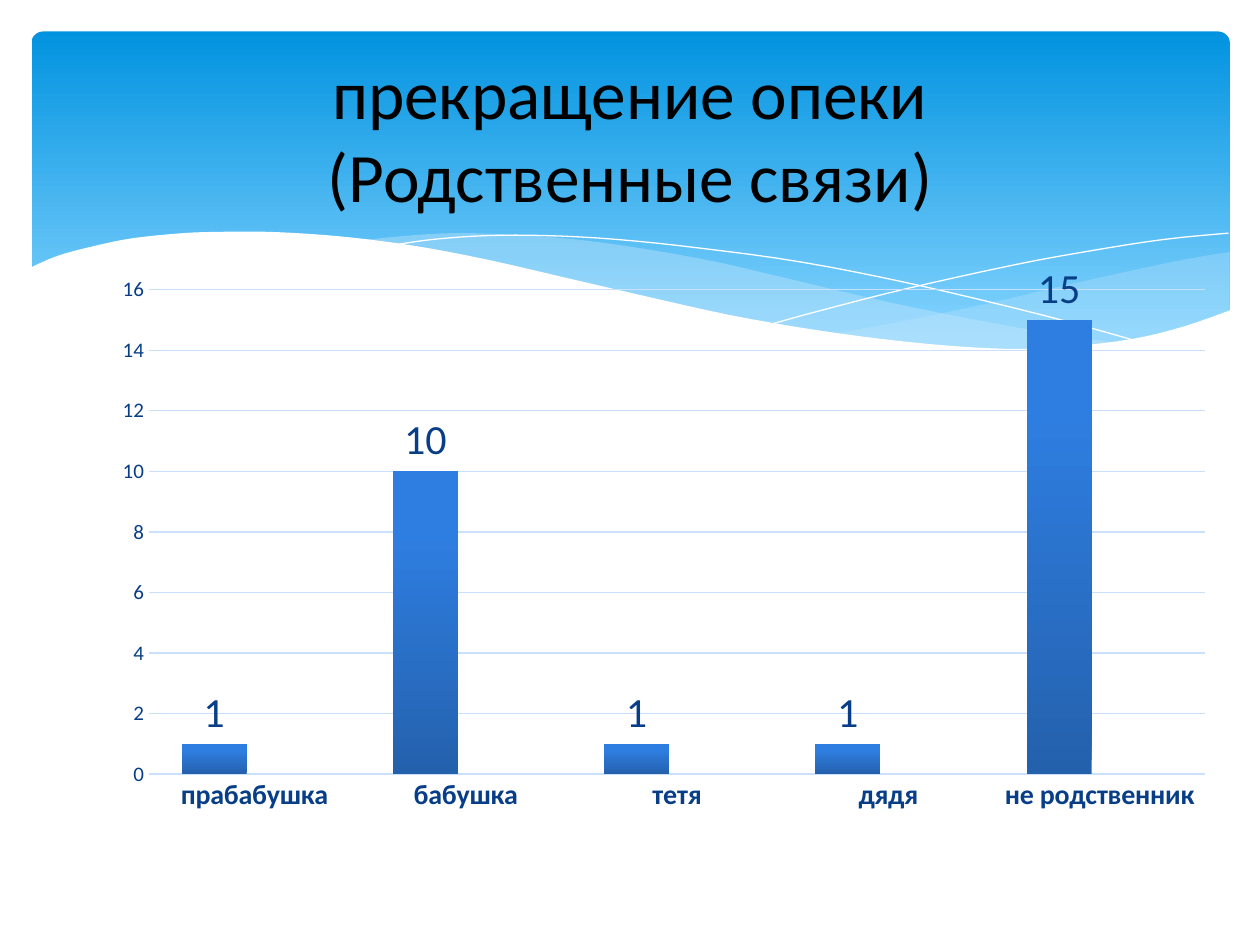
from lxml import etree
from pptx import Presentation
from pptx.chart.data import CategoryChartData
from pptx.dml.color import RGBColor
from pptx.enum import chart as ch, shapes, text
from pptx.oxml.ns import qn
from pptx.util import Inches, Pt

FONT = "Calibri"
COLORS = {
    "white": "FFFFFF", "black": "000000", "sky": "0293E0", "sky_light": "83D3FE",
    "wave": "C6E7FC", "label": "073E87", "grid": "CBE0FC",
    "blue_dark": "2461AD", "blue": "2E7EE1", "green_dark": "84AE0B", "green": "ACE20E",
}
CATEGORIES = ["прабабушка", "бабушка", "тетя", "дядя", "не родственник"]
GUARDIANS = [1, 10, 1, 1, 15]

# Each wave is a list of curves; a corner lies where two curves meet.
RIGHT_WAVE = [
    [(9.76, 2), (9.35, 2.07), (8.61, 2.23), (7.79, 2.42), (7.06, 2.57), (6.61, 2.65)],
    [(6.61, 2.65), (7.19, 2.72), (7.69, 2.77), (8.14, 2.78), (8.63, 2.75),
     (9.05, 2.69), (9.42, 2.59), (9.76, 2.47)],
]
MIDDLE_WAVE = [
    [(8.93, 2.73), (8.37, 2.65), (7.75, 2.54), (7.06, 2.4), (6.29, 2.22), (5.69, 2.08),
     (5.14, 1.98), (4.65, 1.91), (4.2, 1.87), (3.61, 1.85), (3.13, 1.88), (2.86, 1.91)],
    [(2.86, 1.91), (3.42, 1.99), (4.04, 2.11), (4.49, 2.22), (5.3, 2.4), (6.01, 2.55),
     (6.65, 2.66), (7.22, 2.74), (7.73, 2.77), (8.18, 2.78), (8.57, 2.77), (8.93, 2.73)],
]
FALLING_LINE = [
    [(3.09, 1.95), (3.44, 1.9), (3.87, 1.87), (4.33, 1.87), (4.89, 1.9), (5.56, 1.97),
     (6.36, 2.08), (7.27, 2.26), (8.31, 2.51), (9.07, 2.72)],
]
RISING_LINE = [
    [(6.13, 2.57), (6.53, 2.46), (7.2, 2.29), (8.06, 2.1), (8.66, 1.99),
     (9.24, 1.9), (9.75, 1.85)],
]
WHITE_WAVE = [
    [(9.77, 2.46), (9.4, 2.59), (8.99, 2.69), (8.5, 2.75), (8.09, 2.77), (7.61, 2.75),
     (7.08, 2.7), (6.48, 2.62), (5.79, 2.5), (5.03, 2.33), (4.47, 2.2), (3.91, 2.07),
     (3.4, 1.97), (2.92, 1.9), (2.5, 1.86), (2.11, 1.84), (1.77, 1.84), (1.46, 1.85),
     (1.06, 1.89), (0.76, 1.95), (0.46, 2.03), (0.23, 2.13)],
    [(0.23, 3.29), (9.77, 3.29)],
]


def rgb(name):
    return RGBColor.from_string(COLORS[name])


def smooth(points, steps=4):
    """Catmull-Rom curve through the points, as a list of points."""
    padded = [points[0], *points, points[-1]]
    curve = [points[0]]
    for a, b, c, d in zip(padded, padded[1:], padded[2:], padded[3:]):
        for i in range(1, steps + 1):
            t = i / steps
            curve.append(tuple(
                q + t / 2 * (r - p + t * (2 * p - 5 * q + 4 * r - s + t * (3 * (q - r) + s - p)))
                for p, q, r, s in zip(a, b, c, d)))
    return curve


def set_gradient(fill, angle, start, end, end_position):
    fill.gradient()
    fill.gradient_angle = angle
    for stop, name, position in zip(fill.gradient_stops, (start, end), (0, end_position)):
        stop.color.rgb = rgb(name)
        stop.position = position


def set_font(font, size, color, bold=False):
    font.name, font.size, font.bold = FONT, Pt(size), bold
    font.color.rgb = rgb(color)


def add_curve(s, curves, closed):
    points = [(Inches(x), Inches(y)) for curve in curves for x, y in smooth(curve)]
    builder = s.shapes.build_freeform(*points[0], scale=1.0)
    builder.add_line_segments(points[1:], close=closed)
    sp = builder.convert_to_shape()
    sp.shadow.inherit = False
    return sp


def add_wave(s, curves, color, opacity=100):
    sp = add_curve(s, curves, True)
    sp.fill.solid()
    sp.fill.fore_color.rgb = rgb(color)
    sp.line.fill.background()
    if opacity < 100:
        clr = sp.element.spPr.find(".//" + qn("a:srgbClr"))
        etree.SubElement(clr, qn("a:alpha"), val=str(opacity * 1000))


def add_hairline(s, curves):
    sp = add_curve(s, curves, False)
    sp.fill.background()
    sp.line.color.rgb = rgb("white")
    sp.line.width = Pt(0)


def add_banner(s):
    sp = s.shapes.add_shape(shapes.MSO_SHAPE.ROUNDED_RECTANGLE,
                            Inches(0.25), Inches(0.25), Inches(9.51), Inches(2.7))
    sp.adjustments[0] = 0.034
    sp.shadow.inherit = False
    sp.line.fill.background()
    set_gradient(sp.fill, 270, "sky", "sky_light", 0.9)


def set_title(s, title):
    sp = s.shapes.title
    sp.left, sp.top, sp.width, sp.height = Inches(0.5), Inches(0.37), Inches(9), Inches(1.37)
    tf = sp.text_frame
    tf.text = title
    tf.vertical_anchor = text.MSO_ANCHOR.MIDDLE
    p = tf.paragraphs[0]
    p.alignment = text.PP_ALIGN.CENTER
    set_font(p.font, 39.6, "black")
    s.shapes._spTree.append(sp.element)  # in front of the banner


def set_plot_layout(chart, **box):
    """Place the inner plot area by fractions of the chart."""
    area = chart.element.find(".//" + qn("c:plotArea"))
    for old in area.findall(qn("c:layout")):
        area.remove(old)
    layout = etree.Element(qn("c:layout"))
    area.insert(0, layout)
    manual = etree.SubElement(layout, qn("c:manualLayout"))
    settings = {"layoutTarget": "inner", "xMode": "edge", "yMode": "edge", **box}
    for tag, value in settings.items():
        etree.SubElement(manual, qn("c:" + tag), val=str(value))


def style_axes(chart):
    category, value = chart.category_axis, chart.value_axis
    for axis in (category, value):
        axis.major_tick_mark = axis.minor_tick_mark = ch.XL_TICK_MARK.NONE
    set_font(category.tick_labels.font, 16, "label", bold=True)
    set_font(value.tick_labels.font, 12, "label")
    value.minimum_scale, value.maximum_scale, value.major_unit = 0, 16, 2
    value.format.line.fill.background()
    for part in (category, value.major_gridlines):
        part.format.line.color.rgb = rgb("grid")
        part.format.line.width = Pt(0.75)


def style_series(series, start, end, label_size):
    set_gradient(series.format.fill, 90, start, end, 0.8)
    labels = series.data_labels
    labels.show_value = True
    labels.position = ch.XL_LABEL_POSITION.OUTSIDE_END
    set_font(labels.font, label_size, "label")


def add_column_chart(s):
    data = CategoryChartData()
    data.categories = CATEGORIES
    data.add_series("Series 1", GUARDIANS)
    data.add_series("Series 2", [None] * len(CATEGORIES))
    chart = s.shapes.add_chart(ch.XL_CHART_TYPE.COLUMN_CLUSTERED, Inches(0.75), Inches(2.1),
                               Inches(8.82), Inches(4.96), data).chart
    chart.has_title = chart.has_legend = False
    set_font(chart.font, 10, "black")
    plot = chart.plots[0]
    plot.vary_by_categories = False
    plot.gap_width, plot.overlap = 100, -24
    style_axes(chart)
    style_series(plot.series[0], "blue_dark", "blue", 24)
    style_series(plot.series[1], "green_dark", "green", 12)
    set_plot_layout(chart, x=0.049, y=0.027, w=0.951, h=0.786)


def main():
    prs = Presentation()
    prs.slide_width, prs.slide_height = Inches(10), Inches(7.5)
    s = prs.slides.add_slide(prs.slide_layouts[5])
    add_banner(s)
    add_wave(s, RIGHT_WAVE, "wave", 29)
    add_wave(s, MIDDLE_WAVE, "wave", 40)
    add_hairline(s, FALLING_LINE)
    add_hairline(s, RISING_LINE)
    add_wave(s, WHITE_WAVE, "white")
    set_title(s, "прекращение опеки\v(Родственные связи)")
    add_column_chart(s)
    prs.save("out.pptx")


if __name__ == "__main__":
    main()
